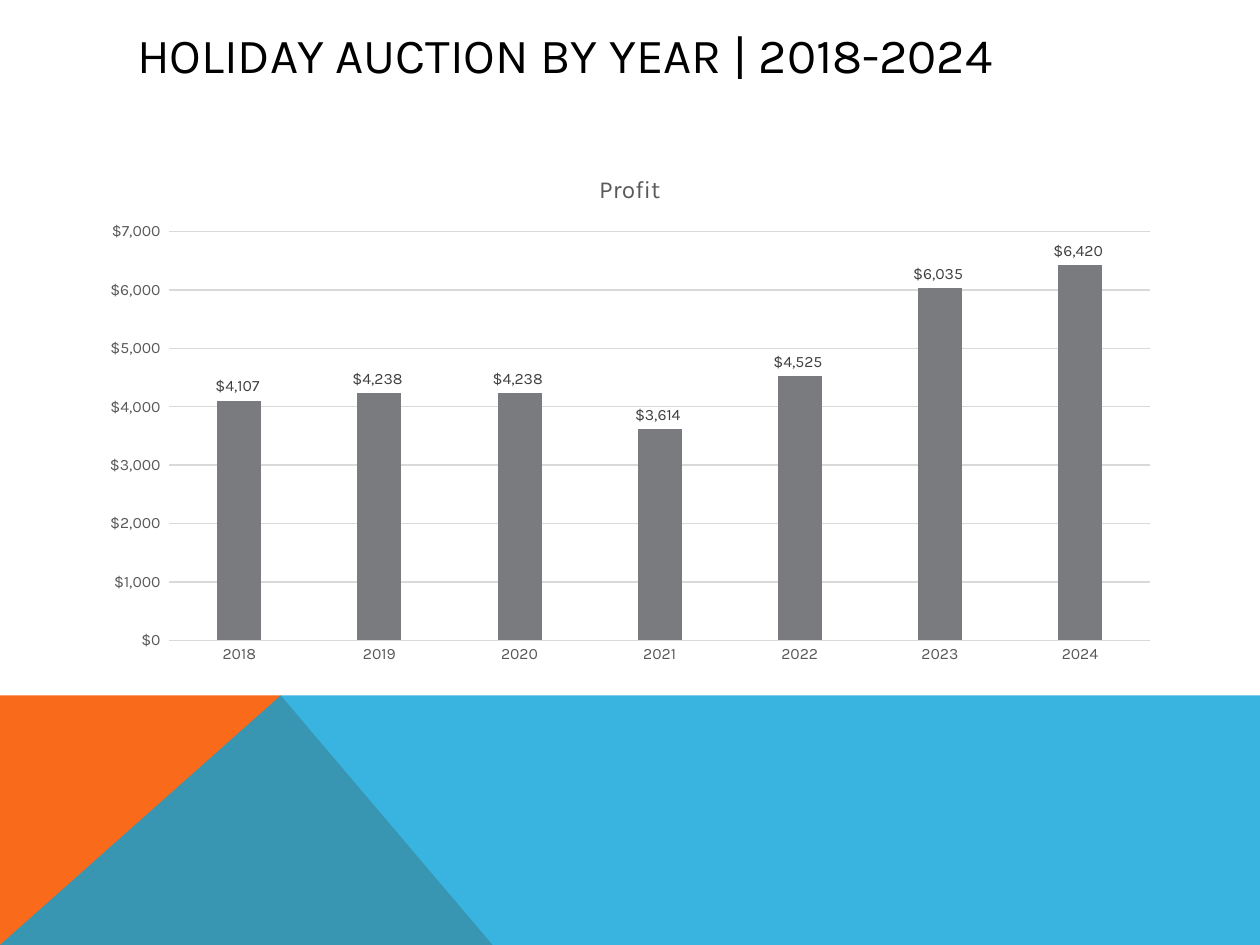
from lxml.etree import SubElement
from pptx import Presentation
from pptx.chart.data import CategoryChartData
from pptx.dml.color import RGBColor
from pptx.enum.chart import XL_CHART_TYPE, XL_LABEL_POSITION, XL_TICK_MARK
from pptx.enum.text import MSO_ANCHOR, PP_ALIGN
from pptx.oxml.ns import qn
from pptx.util import Cm, Pt

FONT = "Karla"
COLORS = {
    "black": "000000",
    "orange": "F96A1B",
    "blue": "08A1D9",
    "bar": "797B7E",
    "grid": "D9D9D9",
    "axis_text": "595959",
    "label_text": "404040",
}
PROFITS = {
    "2018": 4107,
    "2019": 4238,
    "2020": 4238,
    "2021": 3614,
    "2022": 4525,
    "2023": 6035,
    "2024": 6420,
}
DOLLARS = '"$"#,##0_);[Red]\\("$"#,##0\\)'

# Slide size and the corners shared by the two bottom panels
WIDTH, HEIGHT = 25.4, 19.05
PANEL_TOP = 14.02
PEAK = (5.66, PANEL_TOP)


def color(name):
    return RGBColor.from_string(COLORS[name])


def style_font(font, size, color_name):
    font.name = FONT
    font.size = Pt(size)
    font.bold = False
    font.color.rgb = color(color_name)


def style_line(line, color_name):
    line.width = Pt(0.75)
    line.color.rgb = color(color_name)


def add_panel(slide, points, color_name, opacity=100):
    corners = [(Cm(x), Cm(y)) for x, y in points]
    builder = slide.shapes.build_freeform(*corners[0], scale=1.0)
    builder.add_line_segments(corners[1:], close=True)
    shape = builder.convert_to_shape()
    shape.shadow.inherit = False
    shape.line.fill.background()
    shape.fill.solid()
    shape.fill.fore_color.rgb = color(color_name)
    if opacity < 100:
        fill_color = shape.fill._xPr.find(".//" + qn("a:srgbClr"))
        SubElement(fill_color, qn("a:alpha"), val=str(opacity * 1000))


def add_title(slide, text):
    title = slide.shapes.title
    title.left, title.top = Cm(2.51), Cm(0.36)
    title.width, title.height = Cm(22.1), Cm(1.45)
    frame = title.text_frame
    frame.word_wrap = True
    frame.vertical_anchor = MSO_ANCHOR.MIDDLE
    paragraph = frame.paragraphs[0]
    paragraph.alignment = PP_ALIGN.LEFT
    run = paragraph.add_run()
    run.text = text
    style_font(run.font, 28, "black")


def style_axes(chart):
    for axis in (chart.category_axis, chart.value_axis):
        axis.major_tick_mark = XL_TICK_MARK.NONE
        axis.minor_tick_mark = XL_TICK_MARK.NONE
        style_font(axis.tick_labels.font, 9, "axis_text")
    style_line(chart.category_axis.format.line, "grid")

    value_axis = chart.value_axis
    value_axis.minimum_scale, value_axis.maximum_scale = 0, 7000
    value_axis.major_unit = 1000
    value_axis.format.line.fill.background()
    style_line(value_axis.major_gridlines.format.line, "grid")
    value_axis.tick_labels.number_format = DOLLARS
    value_axis.tick_labels.number_format_is_linked = False


def style_columns(plot):
    plot.gap_width = 219
    plot.overlap = -27
    plot.vary_by_categories = False
    series = plot.series[0]
    series.invert_if_negative = False
    series.format.fill.solid()
    series.format.fill.fore_color.rgb = color("bar")
    labels = series.data_labels
    labels.show_value = True
    labels.position = XL_LABEL_POSITION.OUTSIDE_END
    labels.number_format = DOLLARS
    labels.number_format_is_linked = False
    style_font(labels.font, 9, "label_text")


def add_profit_chart(slide):
    data = CategoryChartData(number_format=DOLLARS)
    data.categories = list(PROFITS)
    data.add_series("Series 1", list(PROFITS.values()))
    chart = slide.shapes.add_chart(
        XL_CHART_TYPE.COLUMN_CLUSTERED,
        Cm(1.78), Cm(3.05), Cm(21.84), Cm(10.54), data,
    ).chart
    style_font(chart.font, 10, "black")
    chart.has_legend = False
    chart.has_title = True
    run = chart.chart_title.text_frame.paragraphs[0].add_run()
    run.text = "Profit"
    style_font(run.font, 14, "axis_text")
    style_axes(chart)
    style_columns(chart.plots[0])


def main():
    presentation = Presentation()
    presentation.slide_width, presentation.slide_height = Cm(WIDTH), Cm(HEIGHT)
    slide = presentation.slides.add_slide(presentation.slide_layouts[5])

    # Bottom panels: orange behind, translucent blue in front
    left_corner, right_corner = (0, HEIGHT), (WIDTH, HEIGHT)
    add_panel(slide, [left_corner, (0, PANEL_TOP), PEAK, (9.93, HEIGHT)], "orange")
    add_panel(slide, [left_corner, PEAK, (WIDTH, PANEL_TOP), right_corner], "blue", 80)

    # Heading and yearly profit
    add_title(slide, "HOLIDAY AUCTION BY YEAR | 2018-2024")
    add_profit_chart(slide)

    presentation.save("out.pptx")


if __name__ == "__main__":
    main()
